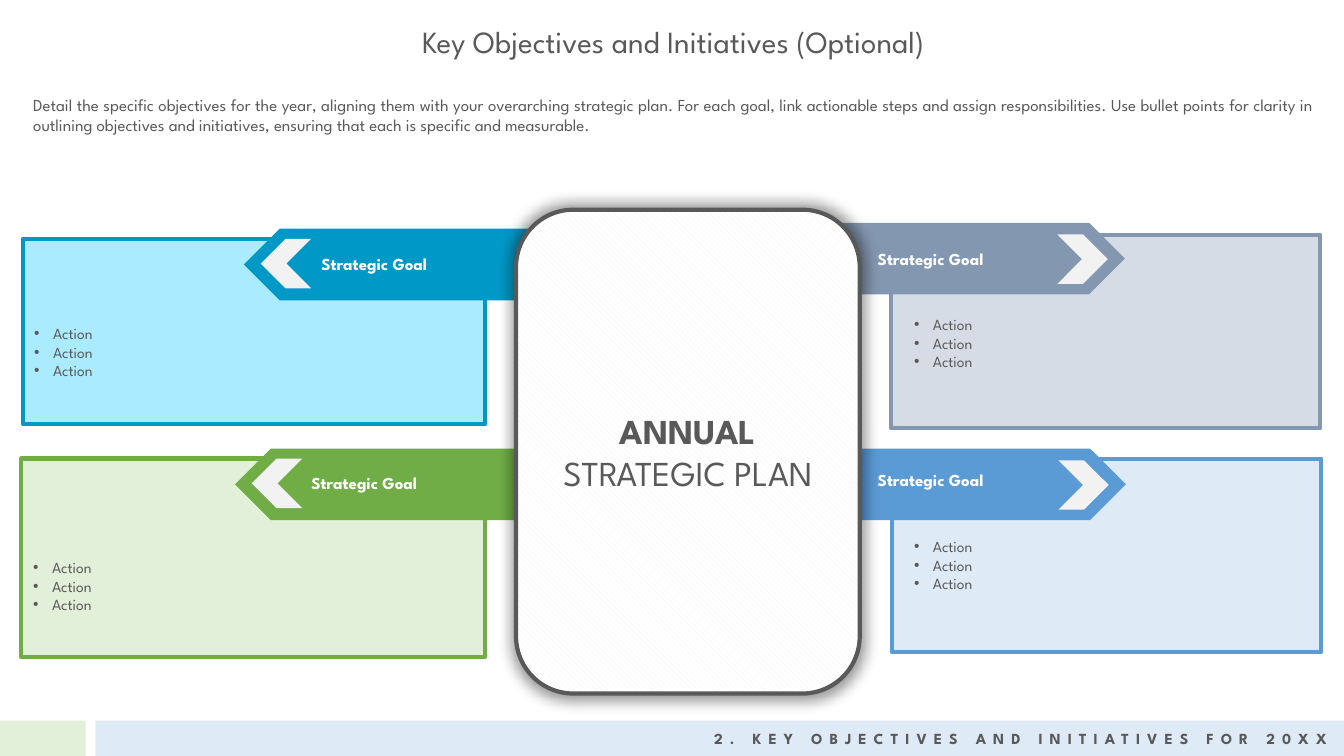
from lxml import etree
from pptx import Presentation
from pptx.dml.color import RGBColor
from pptx.enum.dml import MSO_PATTERN
from pptx.enum.shapes import MSO_SHAPE
from pptx.enum.text import MSO_ANCHOR, PP_ALIGN
from pptx.oxml import parse_xml
from pptx.oxml.ns import qn
from pptx.util import Pt

FONT = "League Spartan"
GRAY = "595959"
rgb = RGBColor.from_string

prs = Presentation()
prs.slide_width, prs.slide_height = Pt(960), Pt(540)
s = prs.slides.add_slide(prs.slide_layouts[6])


def add_box(kind, x, y, w, h, fill, line=None):
    sp = s.shapes.add_shape(kind, Pt(x), Pt(y), Pt(w), Pt(h))
    sp.shadow.inherit = False
    sp.fill.solid()
    sp.fill.fore_color.rgb = rgb(fill)
    if line:
        sp.line.color.rgb = rgb(line)
        sp.line.width = Pt(3)
    else:
        sp.line.fill.background()
    return sp


def add_text(text, x, y, w, h, size, color=GRAY, bold=False, align=PP_ALIGN.LEFT, bullet=False):
    tf = s.shapes.add_textbox(Pt(x), Pt(y), Pt(w), Pt(h)).text_frame
    tf.word_wrap = True
    tf.text = text
    for p in tf.paragraphs:
        p.alignment = align
        if bullet:
            pPr = p._p.get_or_add_pPr()
            pPr.set("marL", str(Pt(13.5)))
            pPr.set("indent", str(-Pt(13.5)))
            etree.SubElement(pPr, qn("a:buFont")).set("typeface", "Arial")
            etree.SubElement(pPr, qn("a:buChar")).set("char", "•")
        for r in p.runs:
            r.font.name = FONT
            r.font.size = Pt(size)
            r.font.bold = bold
            r.font.color.rgb = rgb(color)
    return tf


add_box(MSO_SHAPE.RECTANGLE, -1.4, 514.8, 62.6, 25.2, "E2F0D9")
add_box(MSO_SHAPE.RECTANGLE, 68.2, 514.8, 892, 25.2, "DEEBF7")
footer = add_text("2. KEY OBJECTIVES AND INITIATIVES FOR 20XX", 87.8, 517, 867.6, 20.9, 11,
                  bold=True, align=PP_ALIGN.RIGHT)
footer.paragraphs[0].runs[0].font._element.set("spc", "500")

add_text("Key Objectives and Initiatives (Optional)", 15.1, 13, 931.7, 33.8, 22, align=PP_ALIGN.CENTER)
add_text("Detail the specific objectives for the year, aligning them with your overarching strategic plan. "
         "For each goal, link actionable steps and assign responsibilities. Use bullet points for clarity in "
         "outlining objectives and initiatives, ensuring that each is specific and measurable.",
         16.6, 64.1, 929.5, 36, 12, align=PP_ALIGN.JUSTIFY)

goals = [
    (180, "E2F0D9", "70AD47", (15.1, 327.6, 331.2, 141.8), (167.8, 320.4), (215.3, 334.1), (16.6, 395.3)),
    (180, "ABEBFF", "0098C6", (16.6, 170.6, 329.8, 132.5), (174.2, 163.4), (222.5, 177.8), (17.3, 228.2)),
    (0, "D6DCE5", "8497B0", (636.5, 167.8, 306.7, 138.2), (521.3, 159.1), (619.9, 174.2), (645.8, 221.8)),
    (0, "DEEBF7", "5B9BD5", (637.2, 327.6, 306.7, 138.2), (522, 320.4), (619.9, 331.9), (645.8, 380.2)),
]
for turn, fill, color, panel, (x, y), heading, actions in goals:
    add_box(MSO_SHAPE.RECTANGLE, *panel, fill, color)
    banner = add_box(MSO_SHAPE.PENTAGON, x, y, 282.2, 51.1, color)
    dx, dy = (12, 7.2) if turn else (234, 8.4)
    chevron = add_box(MSO_SHAPE.CHEVRON, x + dx, y + dy, 36, 35.3, "F2F2F2")
    banner.rotation = chevron.rotation = turn
    add_text("Strategic Goal", *heading, 175, 21.6, 12, "FFFFFF", bold=True)
    add_text("\n".join(["Action"] * 3), *actions, 296.6, 47.5, 11, align=PP_ALIGN.JUSTIFY, bullet=True)

plan = add_box(MSO_SHAPE.FLOWCHART_ALTERNATE_PROCESS, 368.6, 149.8, 245.5, 345.6, "FFFFFF", GRAY)
plan.fill.patterned()
plan.fill.pattern = MSO_PATTERN.WIDE_DOWNWARD_DIAGONAL
plan.fill.fore_color.rgb = rgb("F2F2F2")
plan.fill.back_color.rgb = rgb("FFFFFF")
effects = plan._element.spPr.find(qn("a:effectLst"))
effects.append(parse_xml(
    '<a:outerShdw xmlns:a="http://schemas.openxmlformats.org/drawingml/2006/main" blurRad="127000" '
    'sx="102000" sy="102000" algn="ctr" rotWithShape="0">'
    '<a:srgbClr val="000000"><a:alpha val="40000"/></a:srgbClr></a:outerShdw>'))
tf = plan.text_frame
tf.word_wrap = True
tf.vertical_anchor = MSO_ANCHOR.MIDDLE
p = tf.paragraphs[0]
p.alignment = PP_ALIGN.CENTER
for text, bold in [("ANNUAL", True), (" STRATEGIC PLAN", False)]:
    r = p.add_run()
    r.text = text
    r.font.name = FONT
    r.font.size = Pt(25)
    r.font.bold = bold
    r.font.color.rgb = rgb(GRAY)

prs.save("out.pptx")
